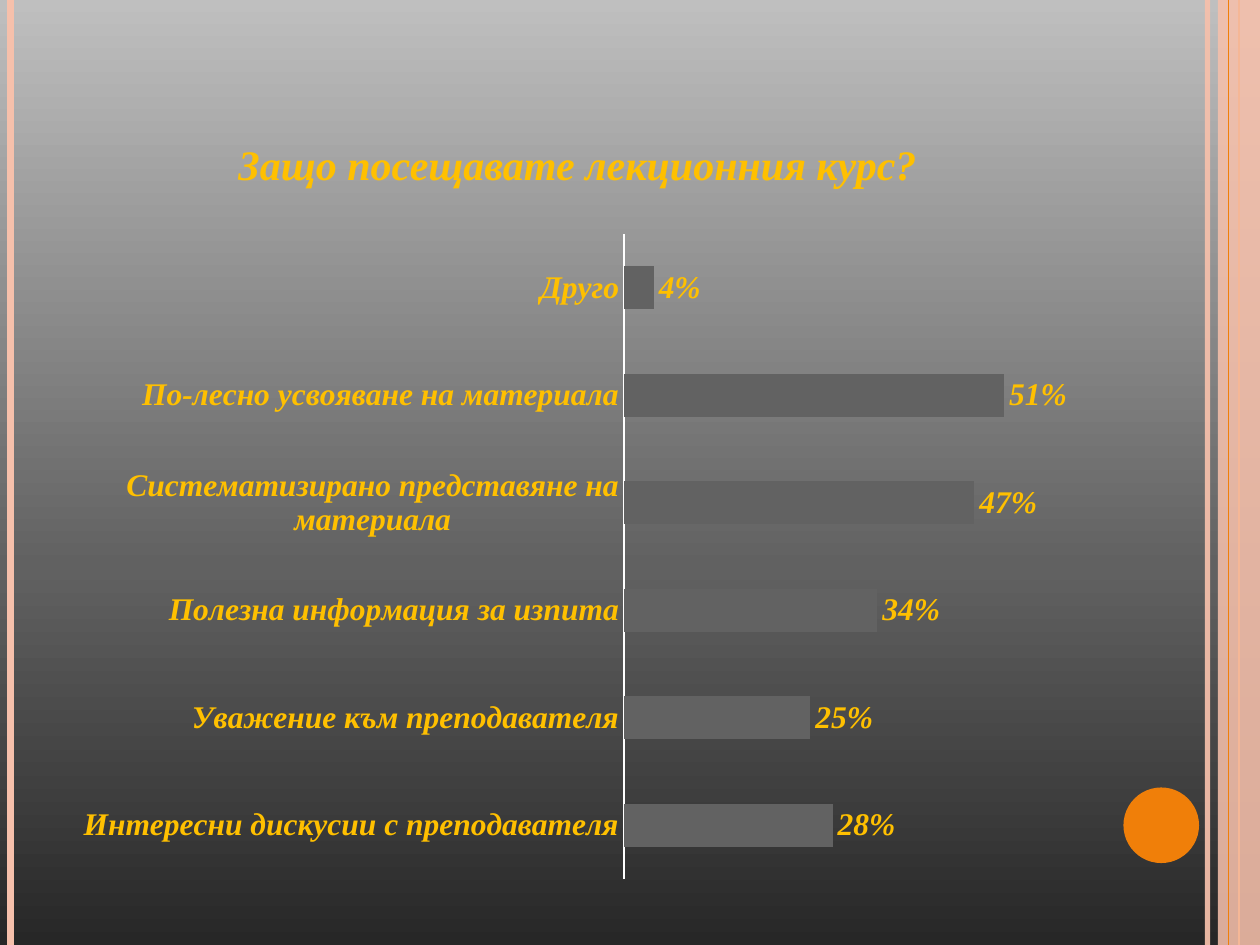
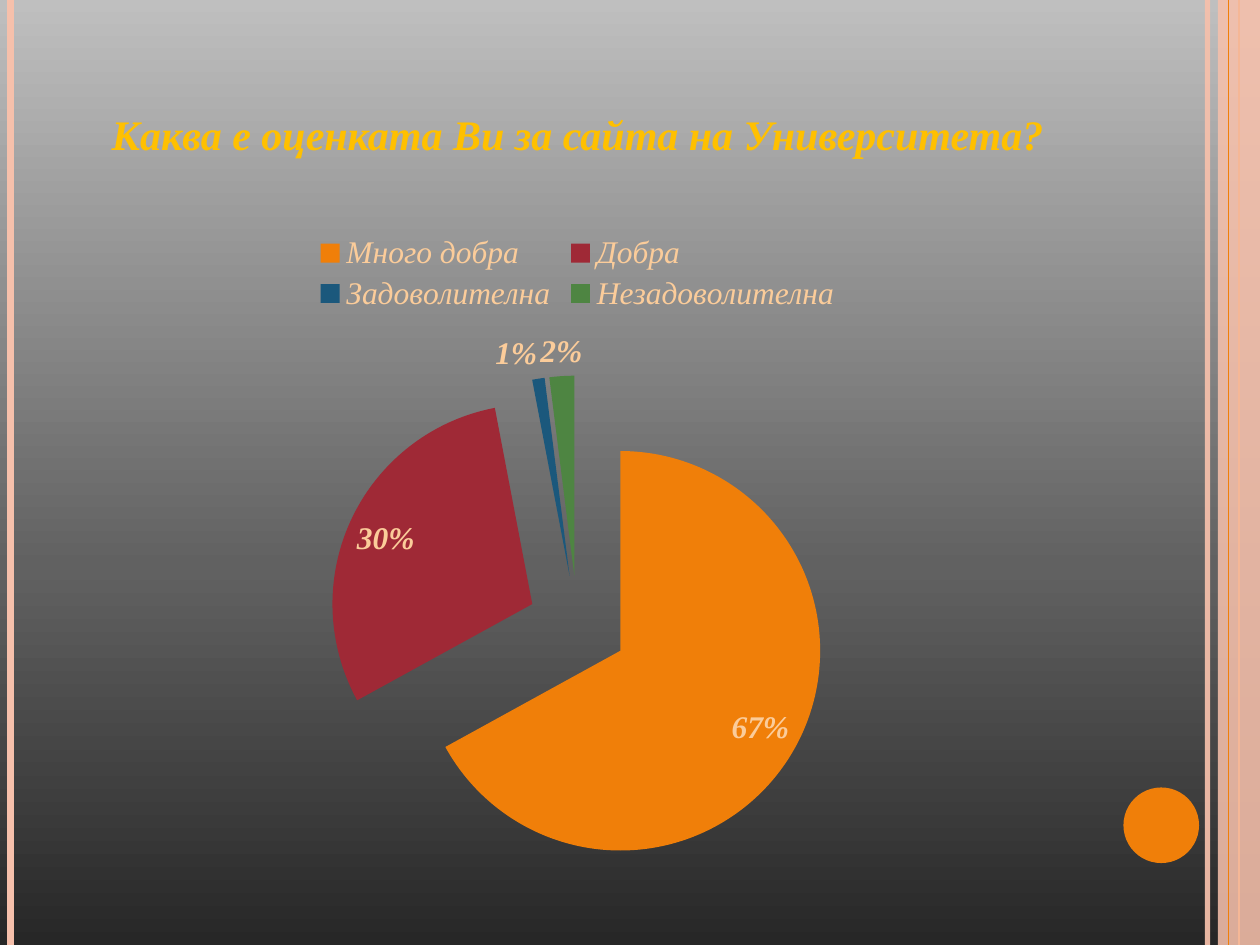
from copy import deepcopy
from dataclasses import dataclass

from lxml.etree import SubElement
from pptx import Presentation
from pptx.chart.data import CategoryChartData
from pptx.dml.color import RGBColor
from pptx.enum.chart import (XL_CHART_TYPE, XL_LABEL_POSITION,
                             XL_LEGEND_POSITION, XL_TICK_LABEL_POSITION,
                             XL_TICK_MARK)
from pptx.enum.shapes import MSO_CONNECTOR, MSO_SHAPE
from pptx.enum.text import MSO_ANCHOR, PP_ALIGN
from pptx.oxml.ns import qn
from pptx.util import Inches, Pt

COLS, ROWS = 120, 90


@dataclass(frozen=True)
class Theme:
    gold: str = "FFC000"
    orange: str = "F07F09"
    blush: str = "F6C0AB"
    cream: str = "FBCC9A"
    white: str = "FFFFFF"
    bar: str = "626262"
    slices: tuple = ("F07F09", "9F2936", "1B587C", "4E8542")
    shade: tuple = ((0, "272727"), (0.4, "616161"), (1, "BFBFBF"))
    face: str = "Times New Roman"
    base: str = "TeX Gyre Schola"
    head: int = 24
    body: int = 18


def paint(fill, color):
    fill.solid()
    fill.fore_color.rgb = RGBColor.from_string(color)


def fade(shape, share):
    """Make the shape's colours opaque only to the given percentage."""
    for color in shape.element.xpath("p:spPr//a:srgbClr"):
        SubElement(color, qn("a:alpha"), val=str(share * 1000))


class Deck:
    def __init__(self, theme):
        self.theme = theme
        self.show = Presentation()
        self.show.slide_width, self.show.slide_height = Inches(10), Inches(7.5)
        self.slide = None
        self.shade()

    def box(self, col, row, wide, high):
        """Turn grid columns and rows into lengths."""
        x, y = self.show.slide_width / COLS, self.show.slide_height / ROWS
        return [round(n) for n in (col * x, row * y, wide * x, high * y)]

    def shade(self):
        master = self.show.slide_master
        fill = master.background.fill
        fill.gradient()
        fill.gradient_angle = 90
        stops = master.element.xpath(".//p:bg//a:gsLst")[0]
        stops.append(deepcopy(stops[0]))
        for stop, (place, color) in zip(fill.gradient_stops, self.theme.shade):
            stop.position = place
            stop.color.rgb = RGBColor.from_string(color)

    def style(self, font, color, size=None, face=None, bold=True, italic=True):
        font.name = face or self.theme.face
        font.size = Pt(size or self.theme.body)
        font.bold, font.italic = bold, italic
        font.color.rgb = RGBColor.from_string(color)

    def rule(self, col, color, width):
        left, top, _, high = self.box(col, 0, 0, ROWS)
        rule = self.slide.shapes.add_connector(
            MSO_CONNECTOR.STRAIGHT, left, top, left, high)
        paint(rule.line.fill, color)
        rule.line.width = Pt(width)
        SubElement(rule.element.xpath("p:spPr")[0], qn("a:effectLst"))
        return rule

    def block(self, kind, color, *place):
        block = self.slide.shapes.add_shape(kind, *self.box(*place))
        block.shadow.inherit = False
        paint(block.fill, color)
        block.line.fill.background()
        return block

    def frame(self):
        """Draw the side bands and the disc."""
        theme = self.theme
        fade(self.rule(115, theme.blush, 3), 93)
        self.rule(1, theme.blush, 4.5)
        self.rule(118, theme.orange, 1.5)
        fade(self.block(MSO_SHAPE.RECTANGLE, theme.blush, 116, 0, 4, ROWS), 87)
        self.rule(117, theme.orange, 0.75)
        self.block(MSO_SHAPE.OVAL, theme.orange, 107, 75, 7.2, 7.2)

    def page(self, text, row):
        self.slide = self.show.slides.add_slide(self.show.slide_layouts[5])
        self.frame()
        title = self.slide.shapes.title
        title.left, title.top, title.width, title.height = self.box(
            6, row, 98, 9.5)
        title.text_frame.text = text
        title.text_frame.vertical_anchor = MSO_ANCHOR.BOTTOM
        line = title.text_frame.paragraphs[0]
        line.alignment = PP_ALIGN.CENTER
        self.style(line.font, self.theme.gold, self.theme.head)

    def chart(self, kind, names, values, form):
        data = CategoryChartData(number_format=form)
        data.categories = names
        data.add_series("Series 1", values)
        chart = self.slide.shapes.add_chart(
            kind, *self.box(6, 21, 98, 64), data).chart
        chart.has_title = chart.has_legend = False
        self.style(chart.font, self.theme.white, face=self.theme.base,
                   bold=False, italic=False)
        return chart

    def label(self, series, color, place):
        labels = series.data_labels
        labels.number_format = "0%"
        labels.number_format_is_linked = False
        labels.position = place
        self.style(labels.font, color)
        return labels

    def bars(self, names, values):
        chart = self.chart(XL_CHART_TYPE.BAR_CLUSTERED, names, values, "0%")
        plot = chart.plots[0]
        plot.gap_width, plot.vary_by_categories = 150, False
        series = plot.series[0]
        paint(series.format.fill, self.theme.bar)
        self.label(series, self.theme.gold,
                   XL_LABEL_POSITION.OUTSIDE_END).show_value = True
        axis = chart.category_axis
        axis.major_tick_mark = axis.minor_tick_mark = XL_TICK_MARK.NONE
        axis.tick_label_position = XL_TICK_LABEL_POSITION.NEXT_TO_AXIS
        axis.has_major_gridlines = False
        paint(axis.format.line.fill, self.theme.white)
        axis.format.line.width = Pt(1.5)
        self.style(axis.tick_labels.font, self.theme.gold)
        scale = chart.value_axis
        scale.visible = scale.has_major_gridlines = False
        scale.minimum_scale, scale.maximum_scale = 0, 0.6

    def pie(self, names, values, burst):
        chart = self.chart(XL_CHART_TYPE.PIE, names, values, "General")
        plot = chart.plots[0]
        plot.vary_by_categories = True
        series = plot.series[0]
        for spot, color in enumerate(self.theme.slices):
            paint(series.points[spot].format.fill, color)
        first = series.points[0].format.fill and chart.element.xpath(
            ".//c:dPt")[0] if hasattr(chart, "element") else None
        if first is None:
            first = plot.series[0].format and series.element.xpath("c:dPt")[0]
        gap = SubElement(first.getparent(), qn("c:explosion"), val=str(burst))
        first.addprevious(gap)
        labels = self.label(series, self.theme.cream,
                            XL_LABEL_POSITION.BEST_FIT)
        labels.show_value, labels.show_percentage = False, True
        chart.has_legend = True
        chart.legend.position = XL_LEGEND_POSITION.TOP
        chart.legend.include_in_layout = False
        self.style(chart.legend.font, self.theme.cream, bold=False)


def main():
    deck = Deck(Theme())
    deck.page("Защо посещавате лекционния курс?", 9.1)
    deck.bars(("Интересни дискусии с преподавателя",
               "Уважение към преподавателя",
               "Полезна информация за изпита",
               "Систематизирано представяне на материала",
               "По-лесно усвояване на материала",
               "Друго"),
              (0.28, 0.25, 0.34, 0.47, 0.51, 0.04))
    deck.page("Каква е оценката Ви за сайта на Университета?", 6.2)
    deck.pie(("Много добра", "Добра", "Задоволителна", "Незадоволителна"),
             (67, 30, 1, 2), burst=25)
    deck.show.save("out.pptx")


if __name__ == "__main__":
    main()
